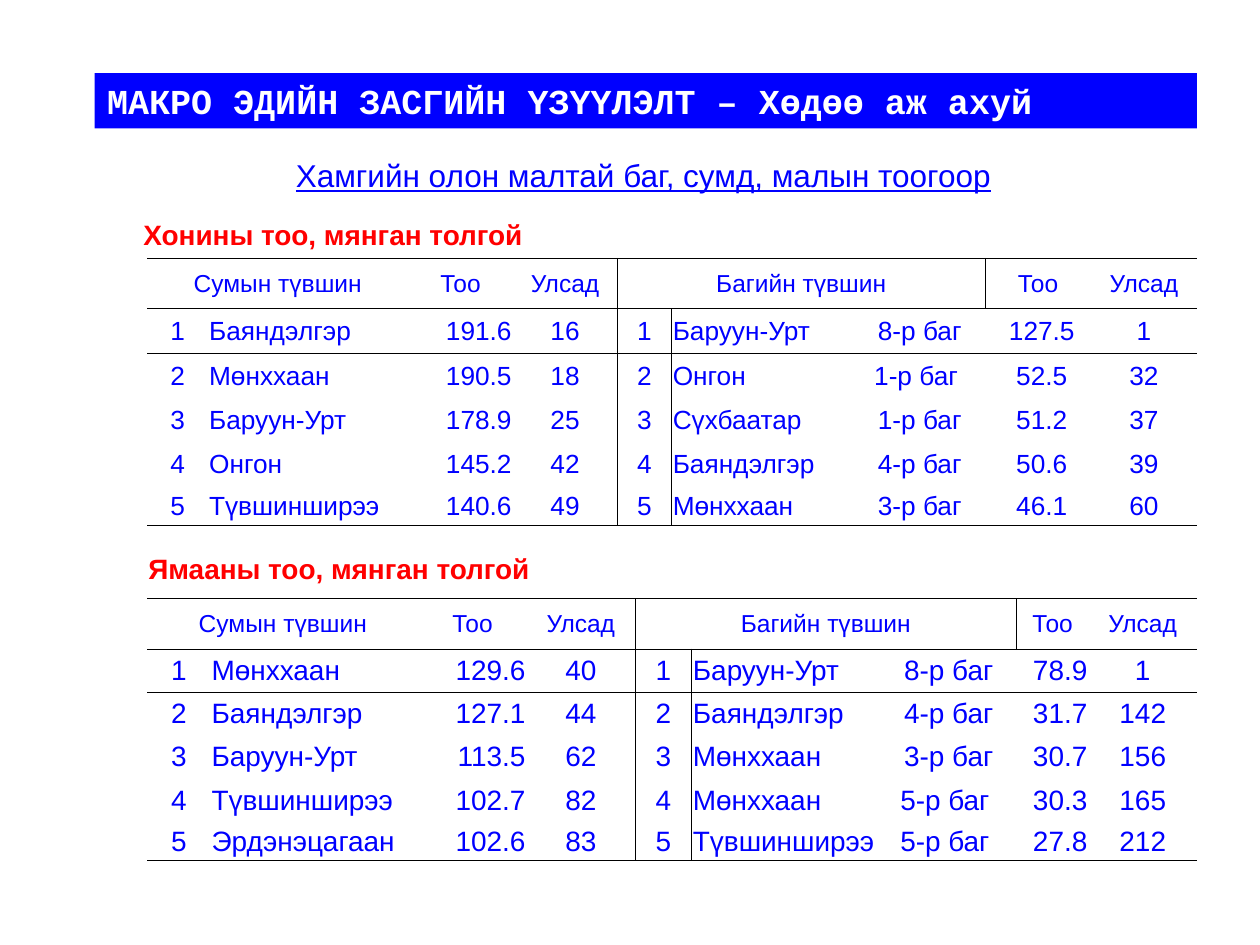
from pptx import Presentation
from pptx.dml.color import RGBColor
from pptx.enum.text import MSO_ANCHOR as Anchor, MSO_AUTO_SIZE as AutoSize, PP_ALIGN as Align
from pptx.oxml.ns import qn
from pptx.util import Inches, Pt
from lxml.etree import SubElement

BLUE = RGBColor(0x00, 0x00, 0xFF)
RED = RGBColor(0xFF, 0x00, 0x00)
WHITE = RGBColor(0xFF, 0xFF, 0xFF)
BLACK = RGBColor(0x00, 0x00, 0x00)

NO_GRID_STYLE = "{2D5ABB26-0587-4C30-8999-92F81FD0307C}"
HEADER = ["Сумын түвшин", "", "Тоо", "Улсад", "Багийн түвшин", "", "", "Тоо", "Улсад"]
MERGES = [(0, 1), (4, 6)]
DIVIDER = 4  # first column of the bag half
HEADER_HEIGHT, LAST_HEIGHT = 0.4, 0.31

SHEEP = [
    ("Баяндэлгэр", "191.6", "16", "Баруун-Урт", "8-р баг", " 127.5", "1"),
    ("Мөнххаан", "190.5", "18", "Онгон", "1-р баг ", " 52.5", "32"),
    ("Баруун-Урт", "178.9", "25", "Сүхбаатар", "1-р баг", " 51.2", "37"),
    ("Онгон", "145.2", "42", "Баяндэлгэр", "4-р баг", " 50.6", "39"),
    ("Түвшинширээ", "140.6", "49", "Мөнххаан", "3-р баг", " 46.1", "60"),
]
GOATS = [
    ("Мөнххаан", "129.6", "40", "Баруун-Урт", "8-р баг", " 78.9", "1"),
    ("Баяндэлгэр", "127.1", "44", "Баяндэлгэр", "4-р баг", " 31.7", "142"),
    ("Баруун-Урт", "113.5", "62", "Мөнххаан", "3-р баг", " 30.7", "156"),
    ("Түвшинширээ", "102.7", "82", "Мөнххаан", "5-р баг ", " 30.3", "165"),
    ("Эрдэнэцагаан", "102.6", "83", "Түвшинширээ", "5-р баг ", " 27.8", "212"),
]
SHEEP_WIDTHS = [0.48, 1.59, 0.83, 0.83, 0.43, 1.45, 1.04, 0.84, 0.84]
GOAT_WIDTHS = [0.5, 1.65, 0.86, 0.86, 0.45, 1.5, 1.08, 0.57, 0.86]
C, L, R = Align.CENTER, Align.LEFT, Align.RIGHT
SHEEP_ALIGNS = [C, L, R, C, C, L, C, C, C]
GOAT_ALIGNS = [C, L, R, C, C, L, C, R, C]


class LivestockSlide:
    def __init__(self, page, font="Arial", line_width=0.5):
        self.page = page
        self.font = font
        self.line_width = line_width

    def add_text(self, frame, text, size, color, align=None, font=None, bold=False,
                 underline=False):
        para = frame.paragraphs[0]
        para.alignment = align
        span = para.add_run()
        span.text = text
        span.font.name = font or self.font
        span.font.size = Pt(size)
        span.font.color.rgb = color
        span.font.bold = bold
        span.font.underline = underline

    def title(self, text, left, top, width, height):
        box = self.page.shapes.title
        box.left, box.top, box.width, box.height = map(Inches, (left, top, width, height))
        box.fill.solid()
        box.fill.fore_color.rgb = BLUE
        frame = box.text_frame
        frame.auto_size = AutoSize.NONE
        frame.vertical_anchor = Anchor.MIDDLE
        self.add_text(frame, text, 20, WHITE, Align.LEFT, "Courier New", bold=True)

    def label(self, text, left, top, height, size, color, **style):
        box = self.page.shapes.add_textbox(*map(Inches, (left, top, 5.83, height)))
        box.text_frame.word_wrap = True
        self.add_text(box.text_frame, text, size, color, **style)

    def border(self, cell, sides):
        """Draw the named sides, which must come in the order L, R, T, B."""
        properties = cell._tc.get_or_add_tcPr()
        for side in sides:
            line = SubElement(properties, qn(f"a:ln{side}"), w=str(Pt(self.line_width)))
            fill = SubElement(line, qn("a:solidFill"))
            SubElement(fill, qn("a:srgbClr"), val=str(BLACK))

    def ranking(self, records, top, height, widths, aligns, size):
        rows = [HEADER] + [
            (str(rank), *record[:3], str(rank), *record[3:])
            for rank, record in enumerate(records, 1)
        ]
        last = len(rows) - 1
        table = self.page.shapes.add_table(
            len(rows), len(widths), Inches(1.17), Inches(top), Inches(sum(widths)), Inches(height)
        ).table
        table.first_row = table.horz_banding = False
        table._tbl.tblPr.find(qn("a:tableStyleId")).text = NO_GRID_STYLE
        for column, width in zip(table.columns, widths):
            column.width = Inches(width)
        body_height = (height - HEADER_HEIGHT - LAST_HEIGHT) / (last - 1)
        heights = [HEADER_HEIGHT] + [body_height] * (last - 1) + [LAST_HEIGHT]
        for row, row_height in zip(table.rows, heights):
            row.height = Inches(row_height)
        for first, end in MERGES:
            table.cell(0, first).merge(table.cell(0, end))

        for i, row in enumerate(rows):
            for j, text in enumerate(row):
                cell = table.cell(i, j)
                sides = "L" if j == DIVIDER else "R" if j == DIVIDER - 1 else ""
                sides += "T" if i <= 1 else ""
                sides += "B" if i in (0, last) else ""
                self.border(cell, sides)
                cell.fill.background()
                cell.margin_left = cell.margin_right = cell.margin_top = Inches(0.01)
                cell.margin_bottom = 0
                cell.vertical_anchor = Anchor.MIDDLE
                if text:
                    self.add_text(cell.text_frame, text, size if i else 14, BLUE,
                                  aligns[j] if i else Align.CENTER)


def main():
    deck = Presentation()
    deck.slide_width, deck.slide_height = Inches(10), Inches(7.5)
    slide = LivestockSlide(deck.slides.add_slide(deck.slide_layouts[5]))
    slide.title("МАКРО ЭДИЙН ЗАСГИЙН ҮЗҮҮЛЭЛТ – Хөдөө аж ахуй", 0.75, 0.58, 8.75, 0.44)
    slide.label("Хамгийн олон малтай баг, сумд, малын тоогоор", 2.25, 1.19, 0.4, 18, BLUE,
                underline=True)
    slide.label("Хонины тоо, мянган толгой", 1.04, 1.68, 0.37, 16, RED, bold=True)
    slide.label("Ямааны тоо, мянган толгой", 1.08, 4.33, 0.37, 16, RED, bold=True)
    slide.ranking(GOATS, 4.75, 2.08, GOAT_WIDTHS, GOAT_ALIGNS, 16)
    slide.ranking(SHEEP, 2.05, 2.12, SHEEP_WIDTHS, SHEEP_ALIGNS, 15)
    deck.save("out.pptx")


if __name__ == "__main__":
    main()
